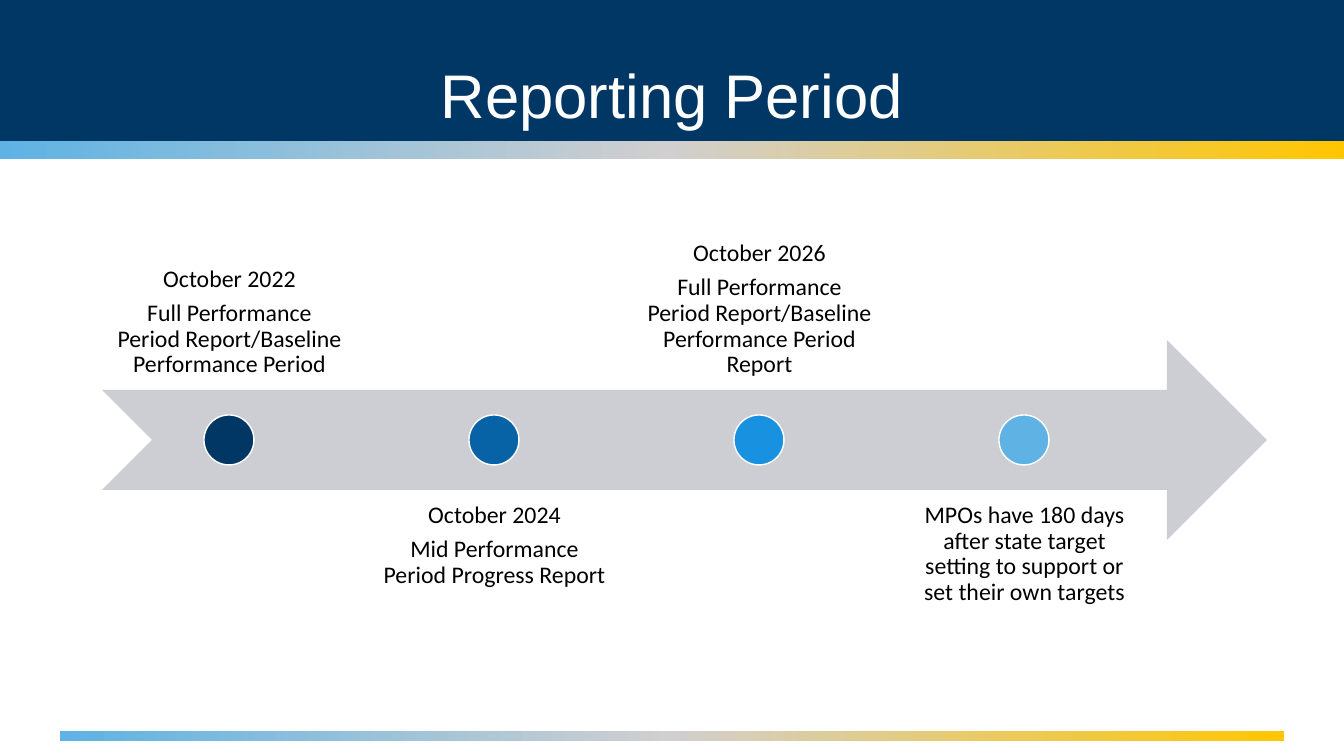
import copy

import pptx
import pptx.dml.color
import pptx.enum.shapes
import pptx.enum.text
import pptx.oxml.ns
import pptx.util

RGBColor = pptx.dml.color.RGBColor
SHAPE = pptx.enum.shapes.MSO_SHAPE
ANCHOR = pptx.enum.text.MSO_ANCHOR
CENTER = pptx.enum.text.PP_ALIGN.CENTER

EMU_PER_PX = 914400 / 100.8
PAGE_WIDTH, PAGE_HEIGHT = 1344, 756

NAVY = RGBColor(0x00, 0x37, 0x64)
BLUE = RGBColor(0x08, 0x63, 0xA6)
BRIGHT_BLUE = RGBColor(0x18, 0x91, 0xE0)
SKY = RGBColor(0x5E, 0xB3, 0xE4)
GRAY = RGBColor(0xD1, 0xCF, 0xCF)
GOLD = RGBColor(0xFF, 0xC6, 0x00)
ARROW_GRAY = RGBColor(0xCC, 0xCE, 0xD3)
WHITE = RGBColor(0xFF, 0xFF, 0xFF)
BLACK = RGBColor(0x00, 0x00, 0x00)

MILESTONES = [
    (NAVY, ["October 2022",
            "Full Performance Period Report/Baseline Performance Period"]),
    (BLUE, ["October 2024", "Mid Performance Period Progress Report"]),
    (BRIGHT_BLUE, ["October 2026",
                   "Full Performance Period Report/Baseline Performance Period Report"]),
    (SKY, ["MPOs have 180 days after state target setting to support "
           "or set their own targets"]),
]
MILESTONE_STEP = 265
LABEL_LEFT, LABEL_WIDTH, LABEL_HEIGHT = 103, 253, 201
LABEL_TOP_ABOVE, LABEL_TOP_BELOW = 190, 490
LABEL_INSET = 13
DOT_LEFT, DOT_TOP, DOT_SIZE = 204, 415, 50


def px(length):
    return pptx.util.Emu(round(length * EMU_PER_PX))


def add_plain_shape(page, kind, left, top, width, height, color):
    shape = page.shapes.add_shape(kind, px(left), px(top), px(width), px(height))
    shape.shadow.inherit = False
    shape.fill.solid()
    shape.fill.fore_color.rgb = color
    shape.line.fill.background()
    return shape


def add_gradient_bar(page, left, top, width, height):
    bar = add_plain_shape(page, SHAPE.RECTANGLE, left, top, width, height, GRAY)
    bar.fill.gradient()
    bar.fill.gradient_angle = 0
    stop_list = bar.element.find(".//" + pptx.oxml.ns.qn("a:gsLst"))
    stop_list.insert(1, copy.deepcopy(stop_list[0]))
    for index, (stop, color) in enumerate(zip(bar.fill.gradient_stops, (SKY, GRAY, GOLD))):
        stop.position = index / 2
        stop.color.rgb = color


def format_paragraph(paragraph, font_name, size, color):
    paragraph.alignment = CENTER
    paragraph.line_spacing = 0.9
    for span in paragraph.runs:
        span.font.name = font_name
        span.font.size = pptx.util.Pt(size)
        span.font.color.rgb = color


def add_label(page, left, top, anchor, lines):
    box = page.shapes.add_textbox(px(left), px(top), px(LABEL_WIDTH), px(LABEL_HEIGHT))
    frame = box.text_frame
    frame.word_wrap = True
    frame.vertical_anchor = anchor
    frame.margin_left = frame.margin_right = px(LABEL_INSET)
    frame.margin_top = frame.margin_bottom = px(LABEL_INSET)
    frame.text = "\n".join(lines)
    for index, paragraph in enumerate(frame.paragraphs):
        format_paragraph(paragraph, "Calibri", 17, BLACK)
        if index:
            paragraph.space_before = pptx.util.Pt(6)


def add_milestone(page, index, color, lines):
    """Place a dot on the arrow, with labels alternating above and below it."""
    offset = index * MILESTONE_STEP
    dot = add_plain_shape(page, SHAPE.OVAL, DOT_LEFT + offset, DOT_TOP,
                          DOT_SIZE, DOT_SIZE, color)
    dot.line.color.rgb = WHITE
    dot.line.width = pptx.util.Pt(1)
    if index % 2:
        add_label(page, LABEL_LEFT + offset, LABEL_TOP_BELOW, ANCHOR.TOP, lines)
    else:
        add_label(page, LABEL_LEFT + offset, LABEL_TOP_ABOVE, ANCHOR.BOTTOM, lines)


def set_title(page, text):
    """Fill the title placeholder and bring it in front of the header band."""
    title = page.shapes.title
    title.left, title.top = px(0), px(39)
    title.width, title.height = px(PAGE_WIDTH), px(120)
    title.text_frame.text = text
    title.text_frame.vertical_anchor = ANCHOR.MIDDLE
    format_paragraph(title.text_frame.paragraphs[0], "Arial", 44, WHITE)
    title.element.getparent().append(title.element)


def main():
    deck = pptx.Presentation()
    deck.slide_width, deck.slide_height = px(PAGE_WIDTH), px(PAGE_HEIGHT)
    page = deck.slides.add_slide(deck.slide_layouts.get_by_name("Title Only"))

    add_plain_shape(page, SHAPE.RECTANGLE, 0, 0, PAGE_WIDTH, 141, NAVY)
    add_gradient_bar(page, 0, 141, PAGE_WIDTH, 18)
    add_gradient_bar(page, 60, 731, 1224, 10)
    add_plain_shape(page, SHAPE.NOTCHED_RIGHT_ARROW, 102, 340, 1165, 200, ARROW_GRAY)
    for index, (color, lines) in enumerate(MILESTONES):
        add_milestone(page, index, color, lines)
    set_title(page, "Reporting Period")

    deck.save("out.pptx")


if __name__ == "__main__":
    main()
